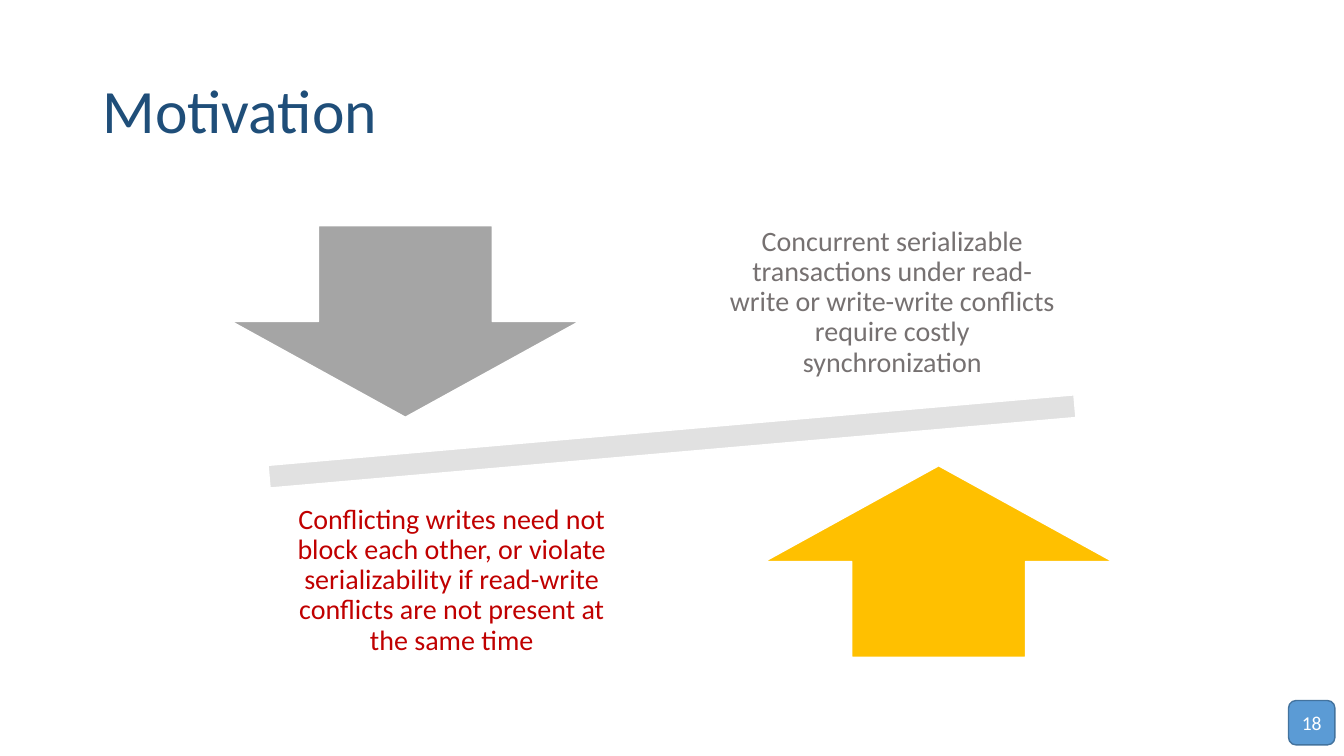
from pptx import Presentation
from pptx.dml.color import RGBColor
from pptx.enum.shapes import MSO_SHAPE
from pptx.enum.text import MSO_ANCHOR, PP_ALIGN
from pptx.util import Inches, Pt

COLORS = {
    "title": "1F4E79", "paper": "FFFFFF", "beam": "E1E1E1",
    "down": "A5A5A5", "up": "FFC000", "cost": "767171",
    "insight": "C00000", "badge": "5B9BD5", "badge_edge": "43739E",
}
PIVOT = (50, 58.4)
ARROW_OFFSET, ARROW_SIZE = (19.84, 15.87), (25.88, 25.33)
CLAIM_OFFSET, CLAIM_SIZE = (16.39, 18.4), (27.6, 26.67)


class SlideBuilder:
    """Draws styled elements placed by percentages of the slide's size."""

    def __init__(self, deck, font="Calibri"):
        self.deck = deck
        self.font = font
        self.slide = deck.slides.add_slide(deck.slide_layouts[5])

    def color(self, name):
        return RGBColor.from_string(COLORS[name])

    def area(self, center, size):
        (x, y), (width, height) = center, size
        box = (x - width / 2, y - height / 2, width, height)
        sides = (self.deck.slide_width, self.deck.slide_height) * 2
        return [round(share * side / 100) for share, side in zip(box, sides)]

    def set_text(self, frame, words, size, color, align, spacing=0.9):
        frame.text = words
        frame.word_wrap = True
        frame.vertical_anchor = MSO_ANCHOR.MIDDLE
        paragraph = frame.paragraphs[0]
        paragraph.alignment = align
        paragraph.line_spacing = spacing
        paragraph.font.name = self.font
        paragraph.font.size = Pt(size)
        paragraph.font.color.rgb = self.color(color)

    def title(self, words, center, size):
        heading = self.slide.shapes.title
        heading.left, heading.top, heading.width, heading.height = self.area(center, size)
        self.set_text(heading.text_frame, words, 44, "title", PP_ALIGN.LEFT)

    def shape(self, kind, center, size, fill, edge="paper", rotation=0):
        figure = self.slide.shapes.add_shape(kind, *self.area(center, size))
        figure.shadow.inherit = False
        figure.fill.solid()
        figure.fill.fore_color.rgb = self.color(fill)
        figure.line.color.rgb = self.color(edge)
        figure.line.width = Pt(1)
        figure.rotation = rotation
        return figure

    def claim(self, words, center, size, color):
        frame = self.slide.shapes.add_textbox(*self.area(center, size)).text_frame
        frame.margin_left = frame.margin_right = Inches(0.16)
        frame.margin_top = frame.margin_bottom = Inches(0.16)
        self.set_text(frame, words, 20, color, PP_ALIGN.CENTER)

    def badge(self, number, center, size):
        page = self.shape(MSO_SHAPE.ROUNDED_RECTANGLE, center, size, "badge", "badge_edge")
        self.set_text(page.text_frame, number, 14, "paper", PP_ALIGN.CENTER, 1)


def from_pivot(offset, across, down):
    return PIVOT[0] + across * offset[0], PIVOT[1] + down * offset[1]


def main():
    deck = Presentation()
    deck.slide_width, deck.slide_height = Inches(13.33), Inches(7.5)
    builder = SlideBuilder(deck)
    builder.title("Motivation", (50, 15), (86.25, 19.33))
    builder.shape(MSO_SHAPE.MATH_MINUS, PIVOT, (81.9, 12.8), "beam", rotation=355)

    sides = [
        (-1, MSO_SHAPE.DOWN_ARROW, "down", "cost",
         "Concurrent serializable transactions under read-write or "
         "write-write conflicts require costly synchronization"),
        (1, MSO_SHAPE.UP_ARROW, "up", "insight",
         "Conflicting writes need not block each other, or violate serializability "
         "if read-write conflicts are not present at the same time"),
    ]
    for side, arrow, fill, ink, words in sides:
        builder.shape(arrow, from_pivot(ARROW_OFFSET, side, side), ARROW_SIZE, fill)
        builder.claim(words, from_pivot(CLAIM_OFFSET, -side, side), CLAIM_SIZE, ink)

    builder.badge("18", (97.6, 95.6), (3.45, 5.87))
    deck.save("out.pptx")


if __name__ == "__main__":
    main()
